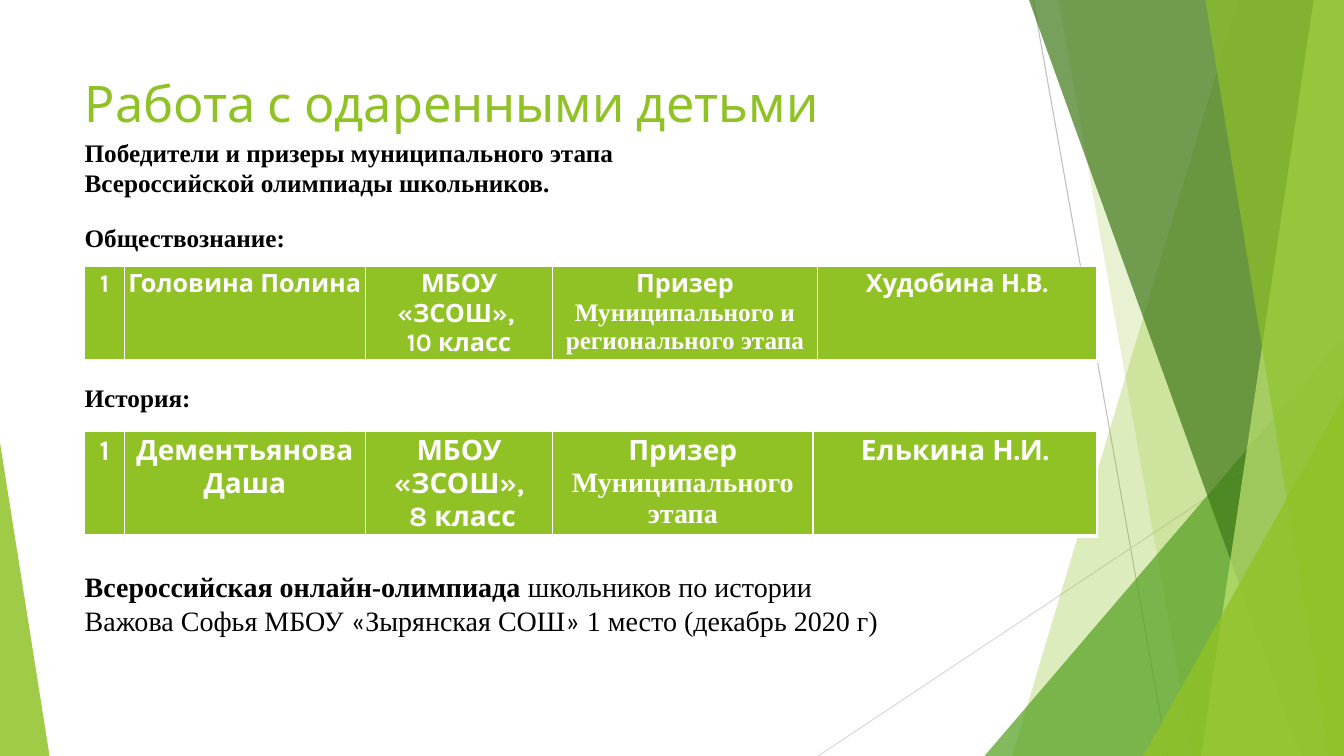
from lxml import etree
from pptx import Presentation
from pptx import util as u
from pptx.dml.color import RGBColor
from pptx.enum import shapes, text
from pptx.oxml import ns

# Grid: 160 columns by 90 rows of square cells
COLS, ROWS = 160, 90
CELL = u.Inches(7.5) // ROWS
LEFT = 8.9
SANS, SERIF, GUILLEMET = "Karla", "Times New Roman", "Calibri"
COLORS = {
    "lime": "90C226", "green": "54A021", "dark": "3F7819", "pale": "C0E474",
    "grey": "BFBFBF", "light": "D9D9D9", "white": "FFFFFF", "black": "000000",
}


def g(n):
    return u.Emu(round(n * CELL))


def rgb(name):
    return RGBColor.from_string(COLORS[name])


def place(sp, x, y, w, h):
    sp.left, sp.top, sp.width, sp.height = g(x), g(y), g(w), g(h)


def add_run(p, words, size, font, color="black", bold=False):
    r = p.add_run()
    r.text = words
    r.font.size, r.font.name, r.font.bold = u.Pt(size), font, bold
    r.font.color.rgb = rgb(color)


def tint(sp, color, alpha):
    sp.shadow.inherit = False
    sp.line.fill.background()
    sp.fill.solid()
    sp.fill.fore_color.rgb = rgb(color)
    clr = sp._element.spPr.find(".//" + ns.qn("a:srgbClr"))
    etree.SubElement(clr, ns.qn("a:alpha")).set("val", str(alpha * 1000))


def add_line(s, x1, y1, x2, y2, color):
    line = s.shapes.add_connector(
        shapes.MSO_CONNECTOR.STRAIGHT, g(x1), g(y1), g(x2), g(y2))
    line.line.color.rgb = rgb(color)
    line.line.width = u.Pt(0.75)
    etree.SubElement(line._element.spPr, ns.qn("a:effectLst"))


def add_facet(s, top, bottom, color, alpha):
    """A full-height band from a slanted left side to the right slide edge."""
    fb = s.shapes.build_freeform(g(top), 0)
    fb.add_line_segments([(g(COLS), 0), (g(COLS), g(ROWS)), (g(bottom), g(ROWS))])
    tint(fb.convert_to_shape(), color, alpha)


def add_triangle(s, x, y, w, apex, color, alpha):
    """A right triangle standing on the bottom edge."""
    sp = s.shapes.add_shape(
        shapes.MSO_SHAPE.ISOSCELES_TRIANGLE, g(x), g(y), g(w), g(ROWS - y))
    sp.adjustments[0] = apex
    tint(sp, color, alpha)


def add_text(s, y, w, h, paragraphs, wrap=True):
    tf = s.shapes.add_textbox(g(LEFT), g(y), g(w), g(h)).text_frame
    tf.word_wrap = wrap
    tf.vertical_anchor = text.MSO_ANCHOR.TOP
    for i, runs in enumerate(paragraphs):
        p = tf.add_paragraph() if i else tf.paragraphs[0]
        for run in runs:
            add_run(p, *run)


def add_borders(cell):
    tc_pr = cell._tc.get_or_add_tcPr()
    for side, points in (("L", 1), ("R", 1), ("T", 1), ("B", 3)):
        ln = etree.SubElement(tc_pr, ns.qn("a:ln" + side), w=str(u.Pt(points)))
        fill = etree.SubElement(ln, ns.qn("a:solidFill"))
        etree.SubElement(fill, ns.qn("a:srgbClr"), val=COLORS["white"])


def add_winner(s, y, h, widths, size, cells):
    """A one-row table; each cell is a list of (words, font) paragraphs."""
    table = s.shapes.add_table(
        1, len(cells), g(10.1), g(y), g(sum(widths)), g(h)).table
    table.rows[0].height = g(h)
    for i, (width, lines) in enumerate(zip(widths, cells)):
        table.columns[i].width = g(width)
        cell = table.cell(0, i)
        cell.margin_left = cell.margin_right = u.Inches(0.03)
        cell.margin_top = cell.margin_bottom = u.Inches(0.03)
        add_borders(cell)
        cell.fill.solid()
        cell.fill.fore_color.rgb = rgb("lime")
        tf = cell.text_frame
        for k, (words, font) in enumerate(lines):
            p = tf.add_paragraph() if k else tf.paragraphs[0]
            p.alignment = text.PP_ALIGN.CENTER
            add_run(p, words, size, font, "white", True)


def add_background(s):
    add_line(s, 123, 0, 139, ROWS, "grey")
    add_line(s, COLS, 48.4, 97.4, ROWS, "light")
    add_facet(s, 147.4, 120.5, "lime", 30)
    add_facet(s, 126, 142, "lime", 20)
    add_triangle(s, 117.2, 40, 42.8, 1, "green", 72)
    add_facet(s, 122.5, 154.9, "dark", 70)
    add_facet(s, 156.4, 143, "pale", 70)
    add_facet(s, 143.5, 158.2, "lime", 65)
    add_triangle(s, 136.1, 47.2, 23.9, 1, "lime", 80)
    add_triangle(s, 0, 52.7, 5.9, 0, "lime", 85)


def add_title(s, words):
    sp = s.shapes.title
    place(sp, LEFT, 8, 112.8, 17.3)
    tf = sp.text_frame
    tf.word_wrap = True
    tf.vertical_anchor = text.MSO_ANCHOR.TOP
    p = tf.paragraphs[0]
    p.alignment = text.PP_ALIGN.LEFT
    add_run(p, words, 36, SANS, "lime")


def main():
    prs = Presentation()
    prs.slide_width, prs.slide_height = g(COLS), g(ROWS)
    s = prs.slides.add_slide(prs.slide_layouts[5])
    add_background(s)
    add_title(s, "Работа с одаренными детьми")

    # Winners by subject
    add_winner(s, 31.7, 11.1, (4.7, 28.7, 22.3, 31.5, 33.3), 18, [
        [("1", SANS)],
        [("Головина Полина", SANS)],
        [("МБОУ «ЗСОШ», ", SANS), ("10 класс", SANS)],
        [("Призер", SANS), ("Муниципального и регионального этапа", SERIF)],
        [("Худобина Н.В.", SANS)],
    ])
    add_winner(s, 51.4, 12.2, (4.7, 28.7, 22.3, 31, 33.8), 20, [
        [("1", SANS)],
        [("Дементьянова Даша", SANS)],
        [("МБОУ «ЗСОШ»,", SANS), (" 8 класс", SANS)],
        [("Призер", SANS), ("Муниципального этапа", SERIF)],
        [("Елькина Н.И.", SANS)],
    ])

    # Online olympiad
    add_text(s, 67.2, 104.4, 8.9, [
        [("Всероссийская онлайн-олимпиада", 20, SERIF, "black", True),
         (" школьников по истории", 20, SERIF)],
        [("Важова Софья МБОУ ", 20, SERIF), ("«", 20, GUILLEMET),
         ("Зырянская СОШ", 20, SERIF), ("»", 20, GUILLEMET),
         (" 1 место (декабрь 2020 г)", 20, SERIF)],
    ])

    # Headings
    for y, w, h, wrap, words in (
        (25.9, 26.5, 4.8, False, "Обществознание:"),
        (44.9, 15.1, 4.8, False, "История:"),
        (15.7, 78.5, 8.5, True, "Победители и призеры муниципального этапа "
                                "Всероссийской олимпиады школьников."),
    ):
        add_text(s, y, w, h, [[(words, 18, SERIF, "black", True)]], wrap)

    prs.save("out.pptx")


if __name__ == "__main__":
    main()
